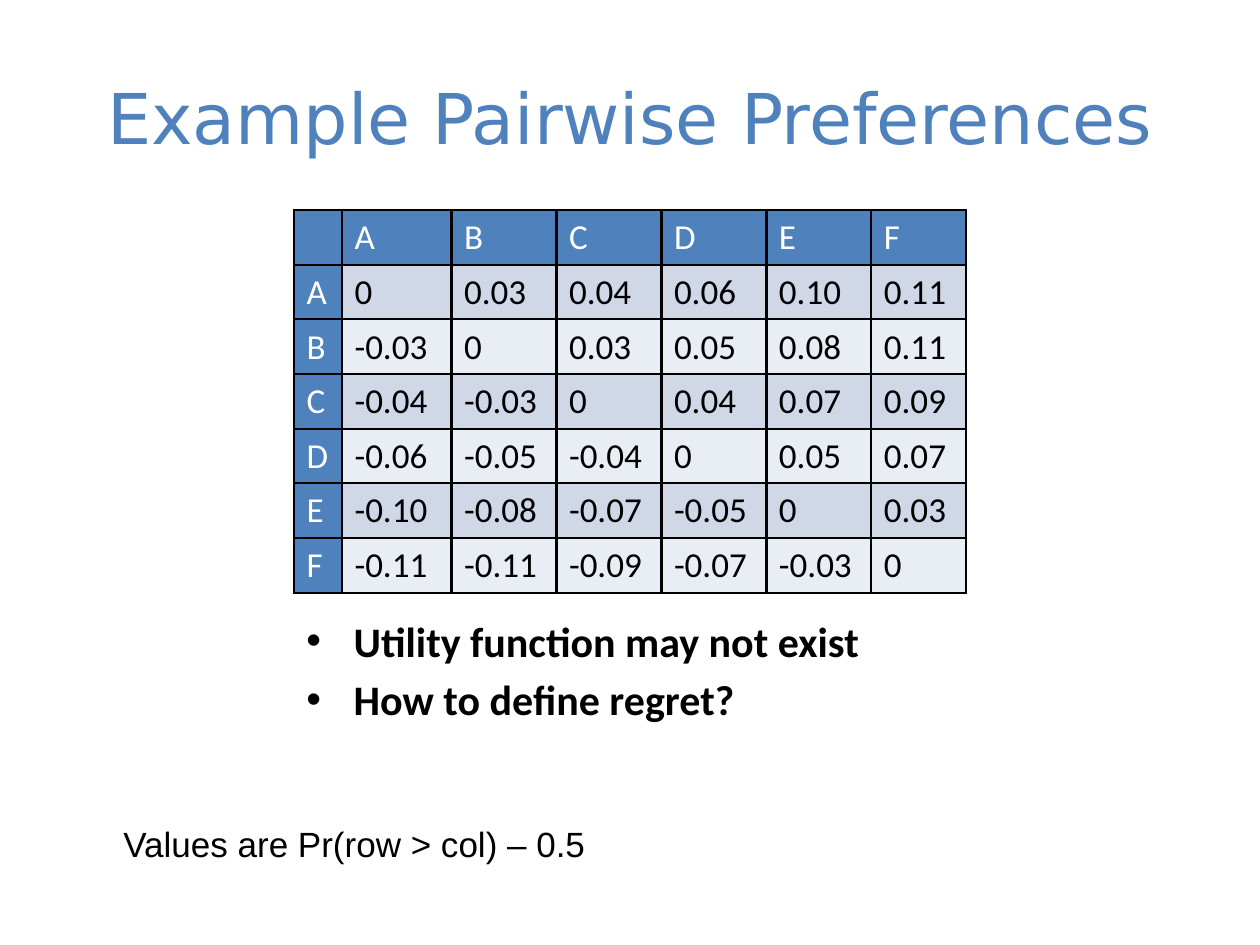
import dataclasses

import lxml.etree
import pptx
import pptx.dml.color
import pptx.enum.text
import pptx.oxml.ns
import pptx.util

Pt = pptx.util.Pt
qn = pptx.oxml.ns.qn


@dataclasses.dataclass(frozen=True)
class Theme:
    """Colours, fonts and type sizes of the slide."""
    accent: str = "4F81BD"
    bands: tuple = ("D0D8E8", "E9EDF4")
    ink: str = "000000"
    paper: str = "FFFFFF"
    title_font: str = "DejaVu Sans"
    body_font: str = "Calibri"
    note_font: str = "Arial"
    title_size: int = 40
    bullet_size: int = 24
    text_size: int = 20
    border: float = 1.5


THEME = Theme()
ITEMS = "ABCDEF"
UPPER = [
    ["0.03", "0.04", "0.06", "0.10", "0.11"],
    ["0.03", "0.05", "0.08", "0.11"],
    ["0.04", "0.07", "0.09"],
    ["0.05", "0.07"],
    ["0.03"],
]
COLUMN_WIDTHS = [27.4, 62.6, 60, 60, 60, 60, 54]


def rgb(value):
    """Return the colour for a hex string."""
    return pptx.dml.color.RGBColor.from_string(value)


def style(p, font, size, color, bold=False):
    """Set the font of a whole paragraph."""
    p.font.name = font
    p.font.size = Pt(size)
    p.font.color.rgb = rgb(color)
    p.font.bold = bold


def add_text_frame(slide, box, wrap=True):
    """Add a text box in the given box and return its text frame."""
    tf = slide.shapes.add_textbox(*map(Pt, box)).text_frame
    tf.word_wrap = wrap
    return tf


def add_title(slide, box, text):
    """Place the centred slide title."""
    tf = add_text_frame(slide, box)
    tf.vertical_anchor = pptx.enum.text.MSO_ANCHOR.MIDDLE
    p = tf.paragraphs[0]
    p.text = text
    p.alignment = pptx.enum.text.PP_ALIGN.CENTER
    style(p, THEME.title_font, THEME.title_size, THEME.accent)


def preference(row, col):
    """Return the antisymmetric preference of one item over another."""
    if row == col:
        return "0"
    if row < col:
        return UPPER[row][col - row - 1]
    return "-" + preference(col, row)


def add_borders(cell):
    """Draw a solid line on all four sides of a cell."""
    tc_pr = cell._tc.get_or_add_tcPr()
    for side in ("a:lnL", "a:lnR", "a:lnT", "a:lnB"):
        ln = lxml.etree.SubElement(tc_pr, qn(side), w=str(Pt(THEME.border)))
        fill = lxml.etree.SubElement(ln, qn("a:solidFill"))
        lxml.etree.SubElement(fill, qn("a:srgbClr"), val=THEME.ink)


def fill_cell(cell, text, fill, color):
    """Write, border and colour one table cell."""
    add_borders(cell)
    cell.fill.solid()
    cell.fill.fore_color.rgb = rgb(fill)
    p = cell.text_frame.paragraphs[0]
    p.text = text
    style(p, THEME.body_font, THEME.text_size, color)


def add_preference_table(slide, box):
    """Place the pairwise preference table."""
    count = len(ITEMS) + 1
    table = slide.shapes.add_table(count, count, *map(Pt, box)).table
    table.first_row = table.horz_banding = False
    for column, width in zip(table.columns, COLUMN_WIDTHS):
        column.width = Pt(width)
    labels = ["", *ITEMS]
    for row in range(count):
        for col in range(count):
            cell = table.cell(row, col)
            if row == 0 or col == 0:
                fill_cell(cell, labels[row + col], THEME.accent, THEME.paper)
            else:
                band = THEME.bands[(row - 1) % 2]
                fill_cell(cell, preference(row - 1, col - 1), band, THEME.ink)


def add_bullets(slide, box, lines):
    """Place the bold bulleted remarks."""
    tf = add_text_frame(slide, box)
    indent = Pt(27)
    for i, line in enumerate(lines):
        p = tf.add_paragraph() if i else tf.paragraphs[0]
        p.text = line
        if i:
            p.space_before = Pt(0.2 * THEME.bullet_size)
        p_pr = p._p.get_or_add_pPr()
        p_pr.set("marL", str(indent))
        p_pr.set("indent", str(-indent))
        lxml.etree.SubElement(p_pr, qn("a:buFont"), typeface=THEME.note_font)
        lxml.etree.SubElement(p_pr, qn("a:buChar"), char="•")
        style(p, THEME.body_font, THEME.bullet_size, THEME.ink, bold=True)


def add_note(slide, box, text):
    """Place the note that explains the table values."""
    tf = add_text_frame(slide, box, wrap=False)
    tf.auto_size = pptx.enum.text.MSO_AUTO_SIZE.SHAPE_TO_FIT_TEXT
    p = tf.paragraphs[0]
    p.text = text
    style(p, THEME.note_font, THEME.text_size, THEME.ink)


def main():
    """Build and save the slide."""
    prs = pptx.Presentation()
    prs.slide_width, prs.slide_height = Pt(720), Pt(540)
    s = prs.slides.add_slide(prs.slide_layouts[6])
    add_title(s, (36, 21.6, 648, 90), "Example Pairwise Preferences")
    add_preference_table(s, (168, 120, sum(COLUMN_WIDTHS), 218.4))
    add_note(s, (63.4, 466.6, 287.3, 31.5), "Values are Pr(row > col) – 0.5")
    add_bullets(s, (168, 348, 384, 124),
                ["Utility function may not exist", "How to define regret?"])
    prs.save("out.pptx")


if __name__ == "__main__":
    main()
